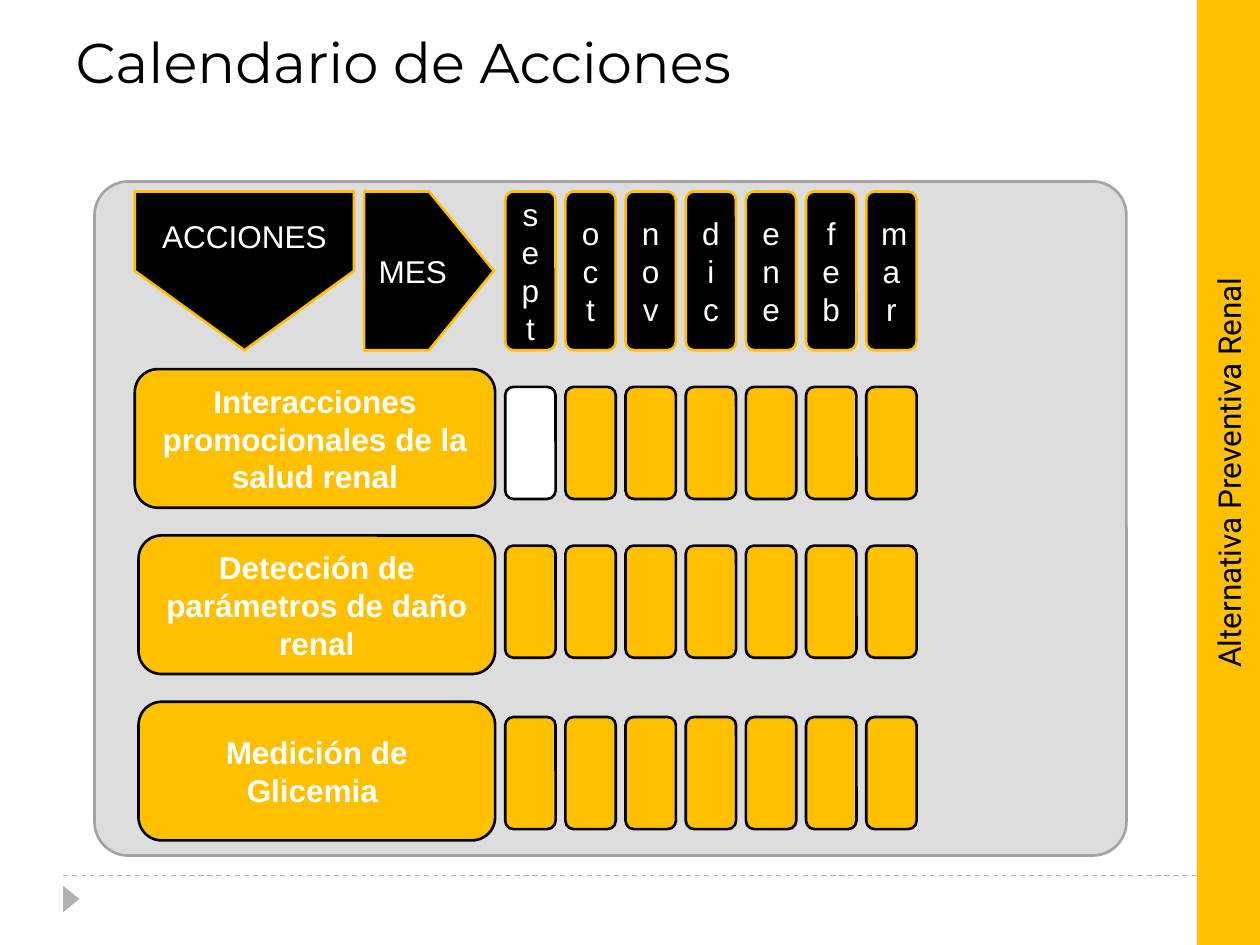
from dataclasses import dataclass

from lxml.etree import SubElement
from pptx import Presentation
from pptx.dml.color import RGBColor
from pptx.enum.dml import MSO_LINE
from pptx.enum.shapes import MSO_CONNECTOR, MSO_SHAPE
from pptx.enum.text import MSO_ANCHOR, PP_ALIGN
from pptx.oxml.ns import qn
from pptx.util import Inches, Pt


@dataclass(frozen=True)
class Theme:
    gold: str = "FFC000"
    black: str = "000000"
    white: str = "FFFFFF"
    panel: str = "DDDDDD"
    edge: str = "A3A3A3"
    mark: str = "B2B2B2"
    body: str = "Arial"
    head: str = "Montserrat"
    side: str = "Roboto"
    size: int = 18
    big: int = 32
    rule: float = 1.5


@dataclass(frozen=True)
class Grid:
    left: float = 4.01
    step: float = 0.4775
    cell: float = 0.4
    top: float = 1.52
    head: float = 1.26
    label: float = 1.1
    bar: float = 0.89

    def col(self, index):
        return self.left + index * self.step


THEME = Theme()
GRID = Grid()
WIDE, HIGH = 10, 7.5
MONTHS = ["sept", "oct", "nov", "dic", "ene", "feb", "mar"]
# text, label left, label top, bar top, months left open
TASKS = [
    ("Interacciones promocionales de la salud renal", 1.07, 2.93, 3.07, {"sept"}),
    ("Detección de parámetros de daño renal", 1.1, 4.25, 4.33, set()),
    ("Medición de Glicemia ", 1.1, 5.57, 5.69, set()),
]


def color(code):
    return RGBColor.from_string(code)


def write(frame, text, ink, font=THEME.body, size=THEME.size, bold=False,
          align=PP_ALIGN.CENTER, anchor=MSO_ANCHOR.MIDDLE):
    frame.word_wrap = True
    frame.vertical_anchor = anchor
    para = frame.paragraphs[0]
    para.alignment = align
    run = para.add_run()
    run.text = text
    run.font.name = font
    run.font.size = Pt(size)
    run.font.bold = bold
    run.font.color.rgb = color(ink)


def block(slide, kind, box, fill, line=None, turn=0):
    shape = slide.shapes.add_shape(kind, *map(Inches, box))
    shape.shadow.inherit = False
    shape.rotation = turn
    shape.fill.solid()
    shape.fill.fore_color.rgb = color(fill)
    if line:
        shape.line.color.rgb = color(line)
        shape.line.width = Pt(THEME.rule)
    else:
        shape.line.fill.background()
    return shape


def round_box(slide, box, fill, line):
    return block(slide, MSO_SHAPE.ROUNDED_RECTANGLE, box, fill, line)


def title(slide):
    shape = slide.shapes.title
    shape.left, shape.top = Inches(0.5), Inches(0.17)
    shape.width, shape.height = Inches(0.9 * WIDE), Inches(1.08)
    write(shape.text_frame, "Calendario de Acciones", THEME.black, THEME.head,
          THEME.big, align=PP_ALIGN.LEFT, anchor=MSO_ANCHOR.TOP)


def footer(slide):
    ends = (0.05 * WIDE, 6.95, 0.95 * WIDE, 6.95)
    line = slide.shapes.add_connector(MSO_CONNECTOR.STRAIGHT, *map(Inches, ends))
    line.line.color.rgb = color(THEME.mark)
    line.line.width = Pt(0.75)
    line.line.dash_style = MSO_LINE.DASH
    SubElement(line._element.spPr, qn("a:effectLst"))
    block(slide, MSO_SHAPE.ISOSCELES_TRIANGLE, (0.46, 7.07, 0.21, 0.13),
          THEME.mark, turn=90)


def header(slide):
    month = block(slide, MSO_SHAPE.PENTAGON, (2.89, GRID.top, 1.03, GRID.head),
                  THEME.black, THEME.gold)
    write(month.text_frame, "MES", THEME.white)
    block(slide, MSO_SHAPE.PENTAGON, (1.31, 1.28, GRID.head, 1.74),
          THEME.black, THEME.gold, 90)
    text = slide.shapes.add_textbox(*map(Inches, (1.07, 1.67, 1.74, 0.4)))
    write(text.text_frame, "ACCIONES", THEME.white, anchor=MSO_ANCHOR.TOP)
    for index, name in enumerate(MONTHS):
        box = (GRID.col(index), GRID.top, GRID.cell, GRID.head)
        cell = round_box(slide, box, THEME.black, THEME.gold)
        write(cell.text_frame, name, THEME.white)


def task(slide, text, left, top, start, blank):
    """Draw one action label and its bar for each month."""
    box = (left, top, 3.93 - left, GRID.label)
    label = round_box(slide, box, THEME.gold, THEME.black)
    write(label.text_frame, text, THEME.white, bold=True)
    for index, name in enumerate(MONTHS):
        fill = THEME.white if name in blank else THEME.gold
        box = (GRID.col(index), start, GRID.cell, GRID.bar)
        round_box(slide, box, fill, THEME.black)


def sidebar(slide):
    band = 0.05 * WIDE
    box = (WIDE - (HIGH + band) / 2, (HIGH - band) / 2, HIGH, band)
    bar = block(slide, MSO_SHAPE.RECTANGLE, box, THEME.gold, turn=270)
    write(bar.text_frame, "Alternativa Preventiva Renal", THEME.black, THEME.side)


def main():
    deck = Presentation()
    deck.slide_width, deck.slide_height = Inches(WIDE), Inches(HIGH)
    slide = deck.slides.add_slide(deck.slide_layouts[5])
    footer(slide)
    title(slide)
    panel = round_box(slide, (0.75, 1.44, 8.19, 5.35), THEME.panel, THEME.edge)
    panel.adjustments[0] = 0.05
    header(slide)
    for row in TASKS:
        task(slide, *row)
    sidebar(slide)
    deck.save("out.pptx")


if __name__ == "__main__":
    main()
